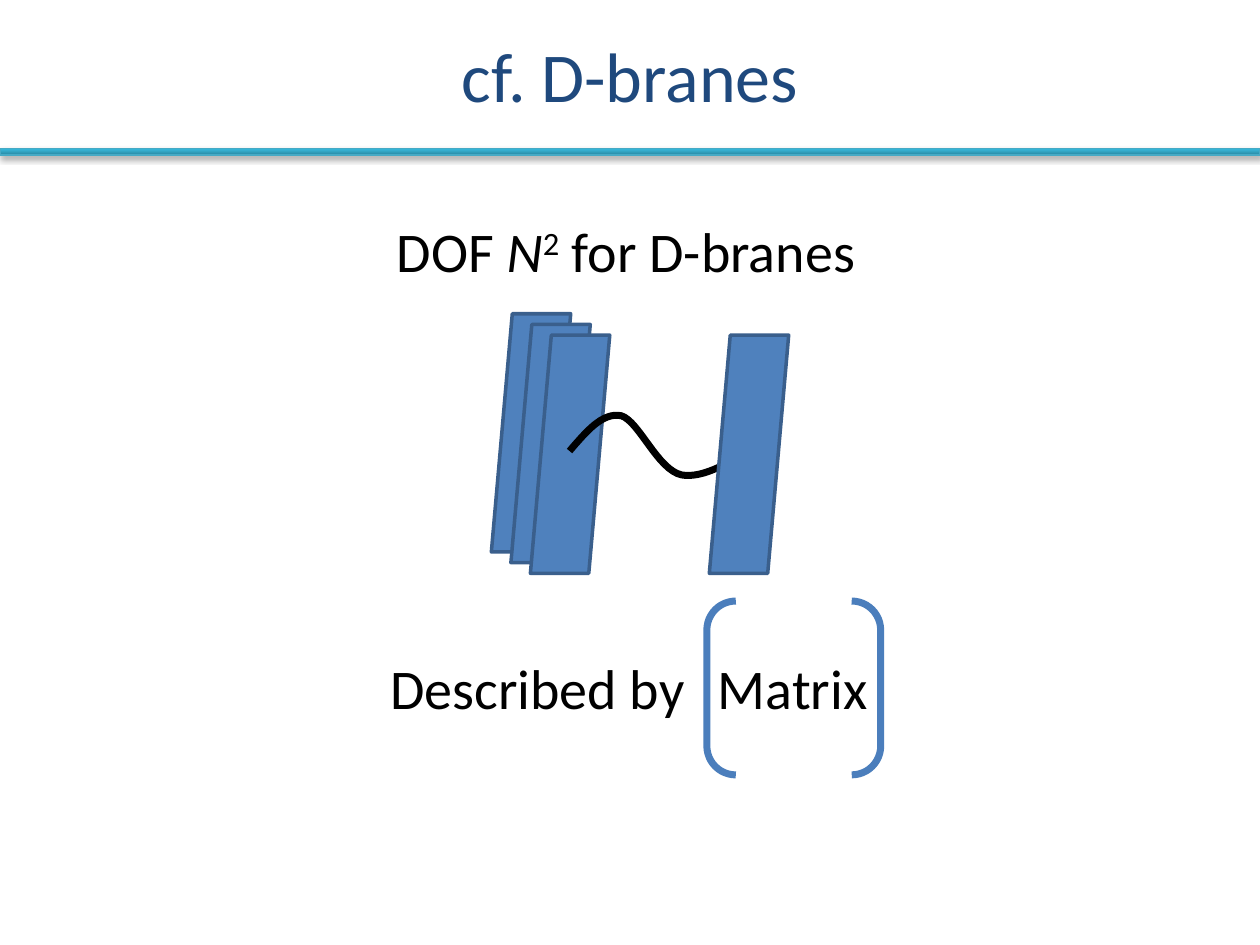
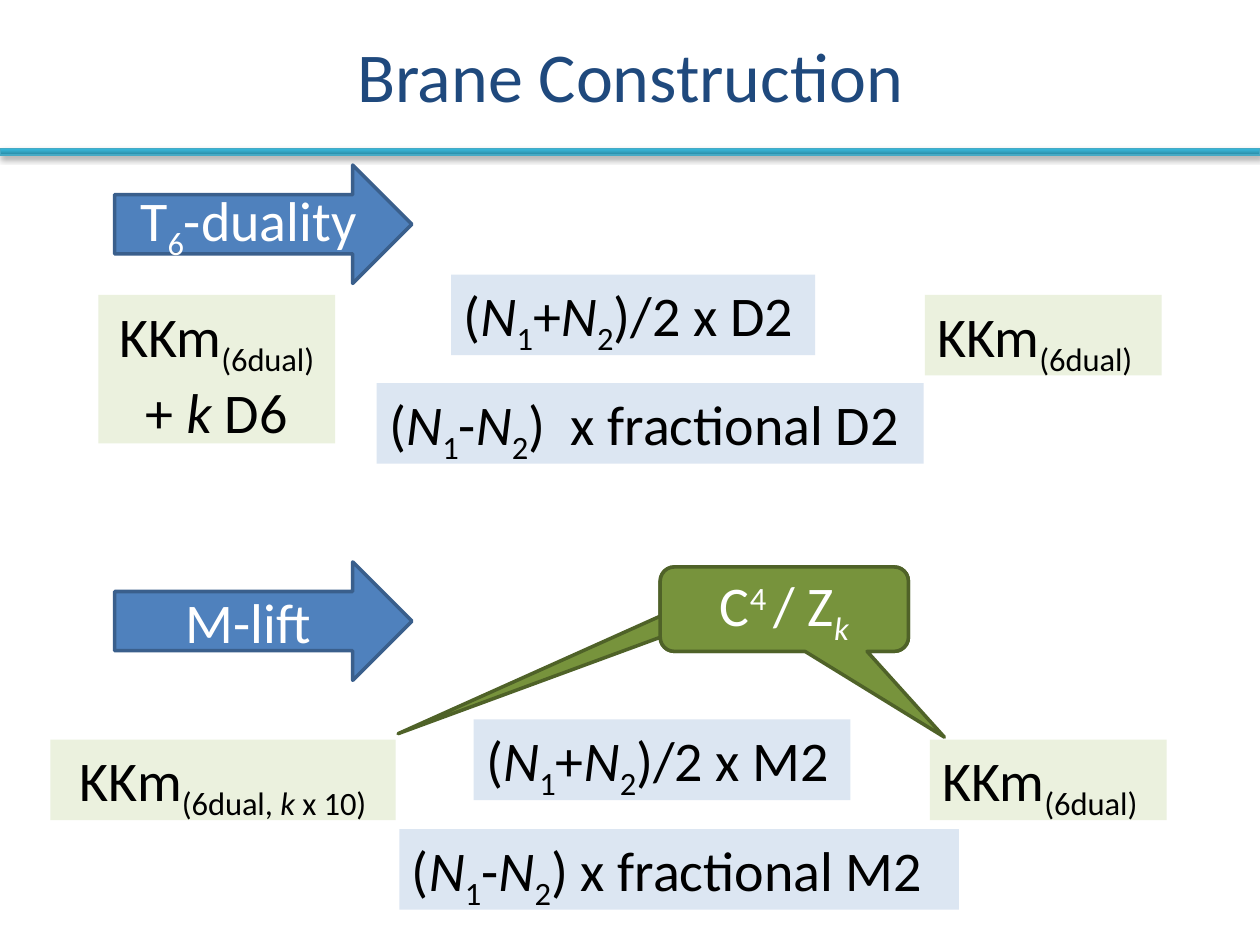
"""Build two slides on D-branes and the brane construction."""
from lxml.etree import fromstring
from pptx import Presentation
from pptx.dml.color import RGBColor
from pptx.enum.shapes import MSO_SHAPE as Preset
from pptx.enum.text import MSO_ANCHOR as Anchor, MSO_AUTO_SIZE as AutoSize, PP_ALIGN as Align
from pptx.util import Inches, Pt

COLORS = {
    "title": "1F497D", "text": "000000", "light": "FFFFFF",
    "band": "37B1D2", "band_dark": "2A88A2", "band_light": "34B4D6", "band_line": "46AAC5",
    "brane": "4F81BD", "brane_line": "3A5F8C", "bracket": "4B7EBC",
    "monopole": "EBF1DE", "membrane": "DCE6F2",
    "callout": "77933C", "callout_line": "4F6228",
}
BASELINES = {"_": "-25000", "^": "30000"}
DRAWING_NS = 'xmlns:a="http://schemas.openxmlformats.org/drawingml/2006/main"'


def draw(slide, preset, box, fill, line, width=2, adjustments=()):
    shape = slide.shapes.add_shape(preset, *map(Inches, box))
    shape.shadow.inherit = False
    for index, value in enumerate(adjustments):
        shape.adjustments[index] = value
    if fill:
        shape.fill.solid()
        shape.fill.fore_color.rgb = RGBColor.from_string(COLORS[fill])
    else:
        shape.fill.background()
    shape.line.color.rgb = RGBColor.from_string(COLORS[line])
    shape.line.width = Pt(width)
    return shape


def write(frame, markup, color="text", size=32, align=Align.LEFT, **frame_format):
    """Fill a frame; runs part at "|" and may start with * (italic), _ (sub) or ^ (super)."""
    for name, value in frame_format.items():
        setattr(frame, name, value)
    for index, line in enumerate(markup.split("\n")):
        paragraph = frame.add_paragraph() if index else frame.paragraphs[0]
        paragraph.alignment = align
        for piece in line.split("|"):
            words = piece.lstrip("*_^")
            marks = piece[:len(piece) - len(words)]
            run = paragraph.add_run()
            run.text = words
            font_format = {"name": "Calibri", "size": Pt(size), "italic": "*" in marks or None}
            for name, value in font_format.items():
                setattr(run.font, name, value)
            run.font.color.rgb = RGBColor.from_string(COLORS[color])
            for mark in marks.replace("*", ""):
                run.font._element.set("baseline", BASELINES[mark])


deck = Presentation()
deck.slide_width, deck.slide_height = Inches(10), Inches(7.5)
layout = deck.slide_layouts[5]
title_box = {"left": 0, "top": 0, "width": 10, "height": 1.18}
for name, value in title_box.items():
    setattr(layout.placeholders[0], name, Inches(value))

slides = []
for heading in ("cf. D-branes", "Brane Construction"):
    slide = deck.slides.add_slide(layout)
    write(slide.shapes.title.text_frame, heading, "title", 40, Align.CENTER,
          vertical_anchor=Anchor.MIDDLE)
    slides.append(slide)
dbranes, construction = slides

band = draw(dbranes, Preset.RECTANGLE, (0, 1.18, 10, 0.05), None, "band_line", 0.75)
band_properties = band.element.spPr
stops = "".join(
    f'<a:gs pos="{position}"><a:srgbClr val="{COLORS[color]}"/></a:gs>'
    for position, color in ((0, "band_dark"), (80000, "band"), (100000, "band_light")))
band_properties.replace(band_properties.find("{*}noFill"), fromstring(
    f'<a:gradFill {DRAWING_NS} rotWithShape="1"><a:gsLst>{stops}</a:gsLst>'
    '<a:lin ang="16200000" scaled="0"/></a:gradFill>'))
band_properties.replace(band_properties.find("{*}effectLst"), fromstring(
    f'<a:effectLst {DRAWING_NS}><a:outerShdw blurRad="{Pt(3.1)}" dist="{Pt(1.8)}" dir="5400000" '
    'rotWithShape="0"><a:srgbClr val="000000"><a:alpha val="35000"/></a:srgbClr>'
    '</a:outerShdw></a:effectLst>'))
layout.shapes.element.append(band.element)

brane_size = (0.63, 1.89)
for layer in range(3):
    draw(dbranes, Preset.PARALLELOGRAM, (3.9 + 0.155 * layer, 2.49 + 0.085 * layer, *brane_size),
         "brane", "brane_line", adjustments=[0.264])

string_start = (4.52, 3.58)
string_bends = [
    ((4.65, 3.43), (4.78, 3.27), (4.93, 3.3)),
    ((5.07, 3.34), (5.22, 3.73), (5.41, 3.77)),
    ((5.59, 3.8), (5.81, 3.66), (6.03, 3.52)),
]
steps = 16
string_points = []
bend_start = string_start
for first, second, bend_end in string_bends:
    for step in range(1, steps + 1):
        t = step / steps
        string_points.append(tuple(
            Inches((1 - t) ** 3 * a + 3 * (1 - t) ** 2 * t * b + 3 * (1 - t) * t ** 2 * c + t ** 3 * d)
            for a, b, c, d in zip(bend_start, first, second, bend_end)))
    bend_start = bend_end
string_builder = dbranes.shapes.build_freeform(*map(Inches, string_start))
string_builder.add_line_segments(string_points, close=False)
open_string = string_builder.convert_to_shape()
open_string.shadow.inherit = False
open_string.fill.background()
open_string.line.color.rgb = RGBColor.from_string(COLORS["text"])
open_string.line.width = Pt(4)

draw(dbranes, Preset.PARALLELOGRAM, (5.63, 2.66, *brane_size), "brane", "brane_line",
     adjustments=[0.264])
draw(dbranes, Preset.DOUBLE_BRACKET, (5.61, 4.77, 1.38, 1.38), None, "bracket", 4)

for arrow_top, step_name in ((1.31, "T|_6|-duality"), (4.46, "M-lift")):
    arrow = draw(construction, Preset.RIGHT_ARROW, (0.91, arrow_top, 2.36, 0.94),
                 "brane", "brane_line")
    write(arrow.text_frame, step_name, "light", align=Align.CENTER,
          vertical_anchor=Anchor.MIDDLE)

labels = [
    (dbranes, (3.05, 1.67, 3.9, 0.64), None, Align.LEFT, "DOF |*N|^2| for D-branes"),
    (dbranes, (5.6, 5.14, 1.4, 0.64), None, Align.LEFT, "Matrix"),
    (dbranes, (3, 5.14, 2.56, 0.64), None, Align.LEFT, "Described by"),
    (construction, (0.78, 2.34, 1.88, 1.18), "monopole", Align.CENTER,
     "KKm|_(6dual)\n+ |*k| D6"),
    (construction, (7.34, 2.34, 1.88, 0.64), "monopole", Align.LEFT, "KKm|_(6dual)"),
    (construction, (3.58, 2.18, 2.89, 0.64), "membrane", Align.LEFT,
     "(|*N|_1|+|*N|_2|)/2 x D2"),
    (construction, (2.99, 3.04, 4.34, 0.64), "membrane", Align.LEFT,
     "(|*N|_1|-|*N|_2|)  x fractional D2"),
    (construction, (0.4, 5.87, 2.74, 0.64), "monopole", Align.CENTER,
     "KKm|_(6dual, |_*k|_ x 10)"),
    (construction, (7.38, 5.87, 1.88, 0.64), "monopole", Align.LEFT, "KKm|_(6dual)"),
    (construction, (3.76, 5.71, 2.99, 0.64), "membrane", Align.LEFT,
     "(|*N|_1|+|*N|_2|)/2 x M2"),
    (construction, (3.17, 6.58, 4.44, 0.64), "membrane", Align.LEFT,
     "(|*N|_1|-|*N|_2|) x fractional M2"),
]
for slide, box, fill, align, markup in labels:
    label = slide.shapes.add_textbox(*map(Inches, box))
    if fill:
        label.fill.solid()
        label.fill.fore_color.rgb = RGBColor.from_string(COLORS[fill])
    write(label.text_frame, markup, align=align, word_wrap=False,
          auto_size=AutoSize.SHAPE_TO_FIT_TEXT)

for pointer in ((-1.556, 1.475), (0.645, 1.516)):
    orbifold = draw(construction, Preset.ROUNDED_RECTANGULAR_CALLOUT, (5.24, 4.5, 1.97, 0.67),
                    "callout", "callout_line", adjustments=(*pointer, 0.167))
    write(orbifold.text_frame, "C|^4 |/ Z|_*k", "light", align=Align.CENTER,
          vertical_anchor=Anchor.MIDDLE)

deck.save("out.pptx")
